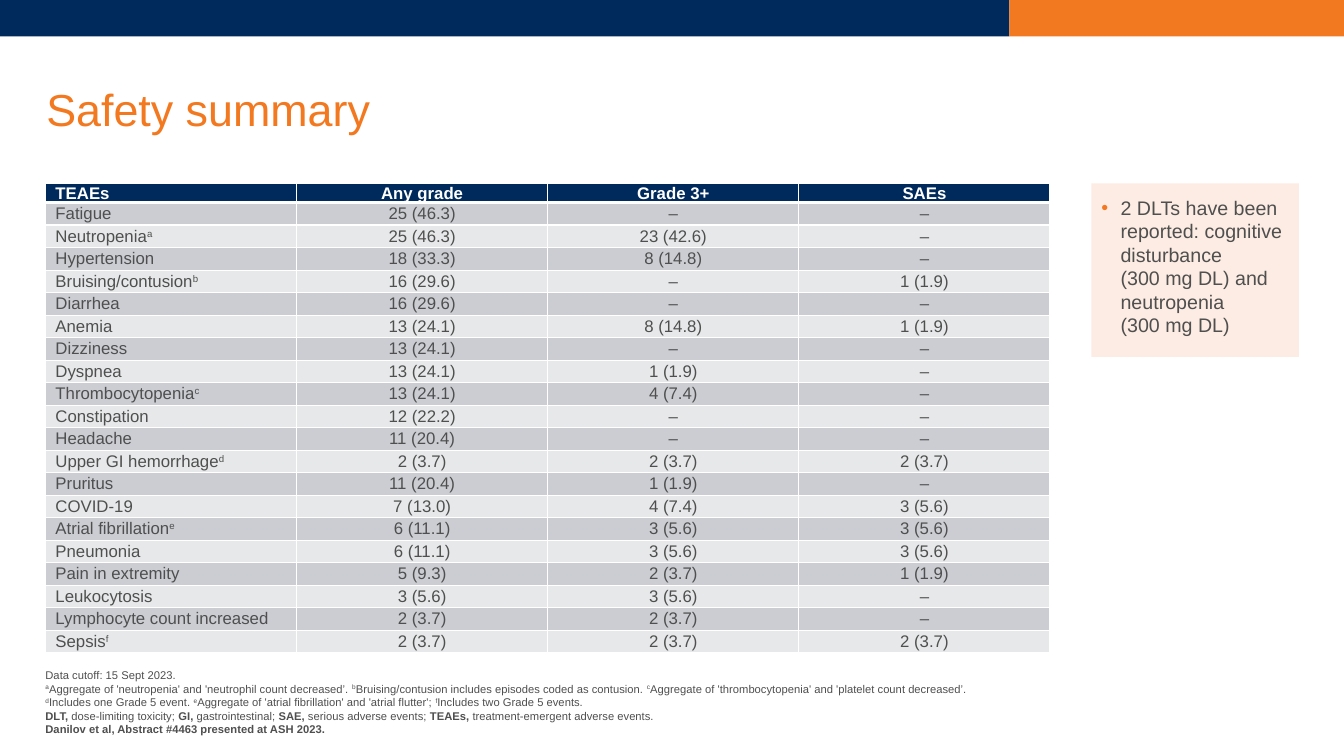
from dataclasses import dataclass
from lxml.etree import SubElement
from pptx import Presentation
from pptx.dml.color import RGBColor as Color
from pptx.enum.shapes import MSO_SHAPE as Preset
from pptx.enum.text import MSO_ANCHOR as Anchor, MSO_AUTO_SIZE as AutoSize, PP_ALIGN as Align
from pptx.oxml.ns import qn
from pptx.util import Inches, Pt


@dataclass
class Theme:
    font: str = "Arial"
    navy: str = "002A5C"
    orange: str = "F37920"
    peach: str = "FDECE3"
    ink: str = "4E4F4E"
    white: str = "FFFFFF"
    bands: tuple = ("CCCDD2", "E7E8EA")
    title: int = 32
    callout: int = 14
    cell: int = 12
    footnote: int = 8


theme = Theme()
deck = Presentation()
deck.slide_width, deck.slide_height = Inches(13.33), Inches(7.5)
page = deck.slides.add_slide(deck.slide_layouts[1])


def area(left, top, width, height):
    """Turn percentages of the slide into left, top, width and height."""
    across, down = deck.slide_width / 100, deck.slide_height / 100
    return int(left * across), int(top * down), int(width * across), int(height * down)


def write(para, text, size, color, bold=False):
    """Fill a paragraph; *stars* mark bold, and ^ raises the next letter."""
    for part, piece in enumerate(text.split("*")):
        for place, chunk in enumerate(piece.split("^")):
            raised, plain = (chunk[:1], chunk[1:]) if place else ("", chunk)
            for words, baseline in ((raised, "30000"), (plain, "0")):
                if not words:
                    continue
                span = para.add_run()
                span.text = words
                span.font.name, span.font.size = theme.font, Pt(size)
                span.font.bold = bold or part % 2 == 1
                span.font.color.rgb = Color.from_string(color)
                span._r.get_or_add_rPr().set("baseline", baseline)


# Top band
for left, width, color in ((0, 75.1, theme.navy), (75.1, 24.9, theme.orange)):
    bar = page.shapes.add_shape(Preset.RECTANGLE, *area(left, 0, width, 4.83))
    bar.shadow.inherit = False
    bar.fill.solid()
    bar.fill.fore_color.rgb = Color.from_string(color)
    bar.line.fill.background()

# Title, callout and footnote frames
title, callout = page.placeholders
footnote = page.shapes.add_textbox(0, 0, 0, 0)
frames = (
    (title, area(3.45, 8.4, 93.25, 12.93), Anchor.MIDDLE, (0, 0, 0, 0)),
    (callout, area(81.2, 24.27, 15.45, 22.93), Anchor.TOP, (0.1, 0.12, 0.1, 0.05)),
    (footnote, area(3.38, 88.4, 70, 8.93), Anchor.BOTTOM, (0, 0, 0, 0)),
)
for box, spot, anchor, insets in frames:
    box.left, box.top, box.width, box.height = spot
    frame = box.text_frame
    frame.word_wrap, frame.auto_size, frame.vertical_anchor = True, AutoSize.NONE, anchor
    (frame.margin_left, frame.margin_top,
     frame.margin_right, frame.margin_bottom) = map(Inches, insets)

# Title
para = title.text_frame.paragraphs[0]
para.alignment, para.line_spacing = Align.LEFT, 0.9
write(para, "Safety summary", theme.title, theme.orange)

# Callout with its bullet
callout.fill.solid()
callout.fill.fore_color.rgb = Color.from_string(theme.peach)
para = callout.text_frame.paragraphs[0]
para.space_before = Pt(0)
props = para._p.get_or_add_pPr()
props.set("marL", str(Inches(0.19)))
props.set("indent", str(-Inches(0.19)))
SubElement(SubElement(props, qn("a:buClr")), qn("a:srgbClr")).set("val", theme.orange)
SubElement(props, qn("a:buFont")).set("typeface", theme.font)
SubElement(props, qn("a:buChar")).set("char", "•")
para.text = ("2 DLTs have been reported: cognitive disturbance \v"
             "(300 mg DL) and neutropenia \v(300 mg DL)")
for span in para.runs:
    span.font.name, span.font.size = theme.font, Pt(theme.callout)
    span.font.color.rgb = Color.from_string(theme.ink)

# Footnotes
notes = (
    "Data cutoff: 15 Sept 2023.",
    "^aAggregate of 'neutropenia' and 'neutrophil count decreased’. "
    "^bBruising/contusion includes episodes coded as contusion. "
    "^cAggregate of 'thrombocytopenia' and 'platelet count decreased’. "
    "^dIncludes one Grade 5 event. "
    "^eAggregate of 'atrial fibrillation' and 'atrial flutter'; "
    "^fIncludes two Grade 5 events.",
    "*DLT, *dose-limiting toxicity; *GI, *gastrointestinal; "
    "*SAE, *serious adverse events; *TEAEs, *treatment-emergent adverse events.",
    "*Danilov et al, Abstract #4463 presented at ASH 2023.*",
)
for index, note in enumerate(notes):
    frame = footnote.text_frame
    para = frame.add_paragraph() if index else frame.paragraphs[0]
    write(para, note, theme.footnote, theme.ink)

# Adverse event table
events = (
    ("TEAEs", "Any grade", "Grade 3+", "SAEs"),
    ("Fatigue", "25 (46.3)", "–", "–"),
    ("Neutropenia^a", "25 (46.3)", "23 (42.6)", "–"),
    ("Hypertension", "18 (33.3)", "8 (14.8)", "–"),
    ("Bruising/contusion^b", "16 (29.6)", "–", "1 (1.9)"),
    ("Diarrhea", "16 (29.6)", "–", "–"),
    ("Anemia", "13 (24.1)", "8 (14.8)", "1 (1.9)"),
    ("Dizziness", "13 (24.1)", "–", "–"),
    ("Dyspnea", "13 (24.1)", "1 (1.9)", "–"),
    ("Thrombocytopenia^c", "13 (24.1)", "4 (7.4)", "–"),
    ("Constipation", "12 (22.2)", "–", "–"),
    ("Headache", "11 (20.4)", "–", "–"),
    ("Upper GI hemorrhage^d", "2 (3.7)", "2 (3.7)", "2 (3.7)"),
    ("Pruritus", "11 (20.4)", "1 (1.9)", "–"),
    ("COVID-19", "7 (13.0)", "4 (7.4)", "3 (5.6)"),
    ("Atrial fibrillation^e", "6 (11.1)", "3 (5.6)", "3 (5.6)"),
    ("Pneumonia", "6 (11.1)", "3 (5.6)", "3 (5.6)"),
    ("Pain in extremity", "5 (9.3)", "2 (3.7)", "1 (1.9)"),
    ("Leukocytosis", "3 (5.6)", "3 (5.6)", "–"),
    ("Lymphocyte count increased", "2 (3.7)", "2 (3.7)", "–"),
    ("Sepsis^f", "2 (3.7)", "2 (3.7)", "2 (3.7)"),
)
spot = area(3.38, 24.27, 74.75, 62.13)
table = page.shapes.add_table(len(events), len(events[0]), *spot).table
header_height = Inches(0.19)
body_height = (spot[3] - header_height) // (len(events) - 1)
for row, event in enumerate(events):
    header = row == 0
    table.rows[row].height = header_height if header else body_height
    for column, text in enumerate(event):
        cell = table.cell(row, column)
        cell.margin_left = cell.margin_right = Inches(0.1)
        cell.margin_top = cell.margin_bottom = 0
        cell.vertical_anchor = Anchor.BOTTOM if header else Anchor.MIDDLE
        para = cell.text_frame.paragraphs[0]
        para.alignment = Align.CENTER if column else Align.LEFT
        write(para, text, theme.cell, theme.white if header else theme.ink, header)
        # Borders come before the fill; the rule below the header is thicker
        props = cell._tc.get_or_add_tcPr()
        for side in ("lnL", "lnR", "lnT", "lnB"):
            thick = (row, side) in ((0, "lnB"), (1, "lnT"))
            border = SubElement(props, qn(f"a:{side}"), w=str(Pt(3 if thick else 1)))
            paint = SubElement(border, qn("a:solidFill"))
            SubElement(paint, qn("a:srgbClr")).set("val", theme.white)
        cell.fill.solid()
        shade = theme.navy if header else theme.bands[(row - 1) % 2]
        cell.fill.fore_color.rgb = Color.from_string(shade)

deck.save("out.pptx")
